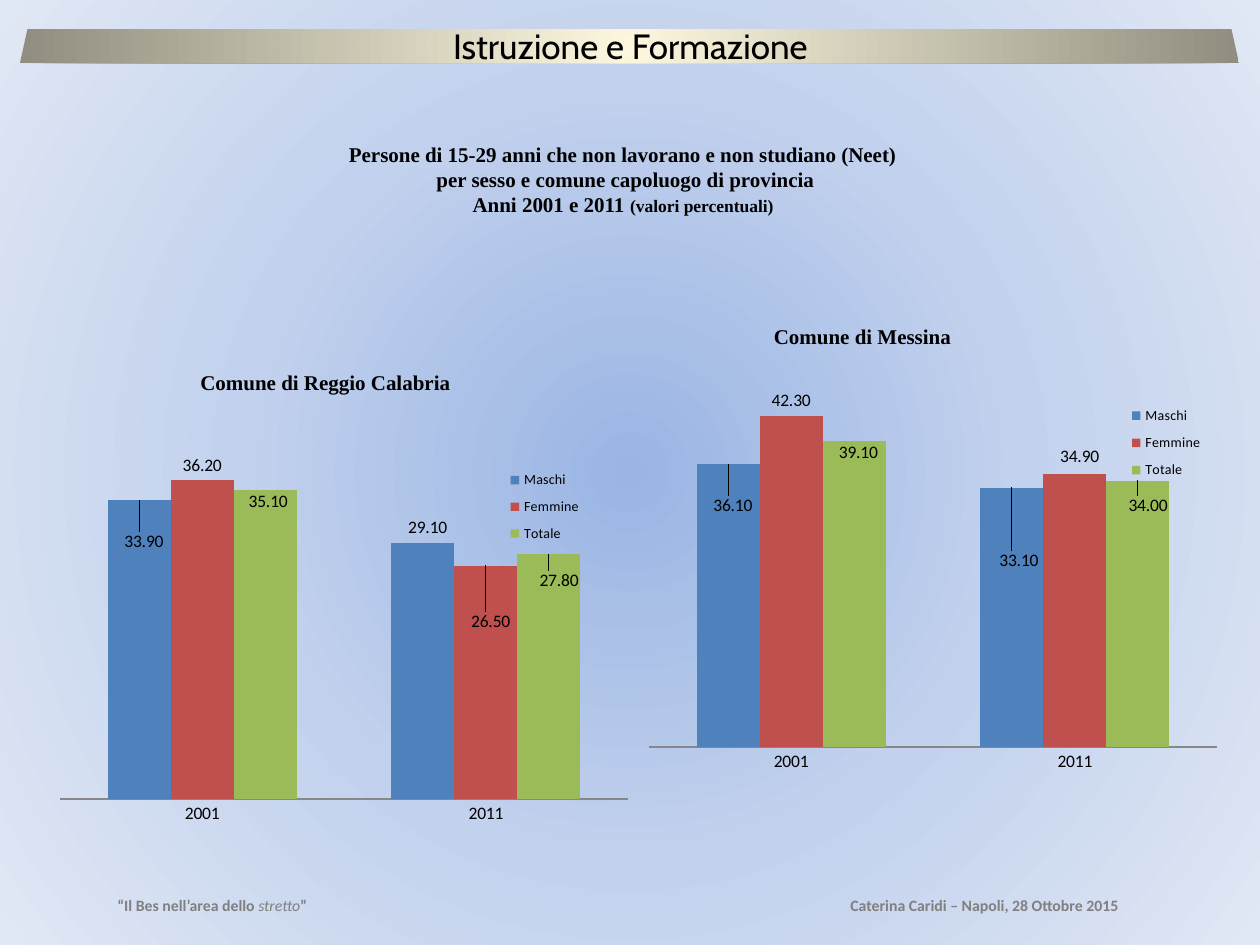
"""Build the slide on young people neither working nor studying in two cities."""
import dataclasses
import typing

import pptx
import pptx.chart.data
import pptx.dml.color
import pptx.enum.chart
import pptx.enum.shapes
import pptx.enum.text
import pptx.oxml
import pptx.oxml.ns
import pptx.util

RGBColor = pptx.dml.color.RGBColor
ALIGN = pptx.enum.text.PP_ALIGN
ANCHOR = pptx.enum.text.MSO_ANCHOR
BLACK = RGBColor(0x00, 0x00, 0x00)
GREY = RGBColor(0x80, 0x80, 0x80)
AXIS_GREY = RGBColor(0x87, 0x87, 0x87)
BLUE = RGBColor(0x4F, 0x81, 0xBD)
RED = RGBColor(0xC0, 0x50, 0x4D)
GREEN = RGBColor(0x9B, 0xBB, 0x59)
BACKGROUND_STOPS = {0: RGBColor(0x9A, 0xB5, 0xE4), 50: RGBColor(0xC2, 0xD1, 0xED),
                    100: RGBColor(0xE1, 0xE8, 0xF5)}
BANNER_STOPS = {0: RGBColor(0xFC, 0xF7, 0xDD), 100: RGBColor(0x91, 0x8E, 0x81)}
SERIF = "Times New Roman"
SANS = "Calibri"
PIXELS_PER_INCH = 126
CHART_SIZE = (590, 403)


class Box(typing.NamedTuple):
    left: int
    top: int
    width: int
    height: int


class Run(typing.NamedTuple):
    text: str
    size: typing.Optional[int] = None
    bold: typing.Optional[bool] = None
    italic: bool = False


@dataclasses.dataclass
class Series:
    name: str
    color: RGBColor
    values: tuple
    label_shifts: dict


@dataclasses.dataclass
class City:
    heading: str
    heading_box: Box
    chart_left: int
    chart_top: int
    axis_maximum: int
    legend: Box
    series: list


CITIES = [
    City("Comune di Reggio Calabria", Box(166, 363, 319, 38), 42, 443, 40, Box(458, 19, 90, 90), [
        Series("Maschi", BLUE, (33.9, 29.1), {0: (5, 56), 1: (5, 0)}),
        Series("Femmine", RED, (36.2, 26.5), {1: (5, 71)}),
        Series("Totale", GREEN, (35.1, 27.8), {0: (3, 27), 1: (10, 41)}),
    ]),
    City("Comune di Messina", Box(703, 317, 319, 38), 631, 391, 45, Box(490, 6, 90, 92), [
        Series("Maschi", BLUE, (36.1, 33.1), {0: (5, 56), 1: (7, 88)}),
        Series("Femmine", RED, (42.3, 34.9), {1: (5, -2)}),
        Series("Totale", GREEN, (39.1, 34.0), {0: (4, 27), 1: (10, 40)}),
    ]),
]


def emu(pixels: int) -> int:
    return round(pixels * pptx.util.Inches(1) / PIXELS_PER_INCH)


def place(box: Box) -> list:
    return [emu(length) for length in box]


def set_radial_gradient(gradient, stops: dict) -> None:
    marks = "".join(f'<a:gs pos="{position * 1000}"><a:srgbClr val="{color}"/></a:gs>'
                    for position, color in stops.items())
    filled = pptx.oxml.parse_xml(
        f'<a:gradFill {pptx.oxml.ns.nsdecls("a")} rotWithShape="1"><a:gsLst>{marks}</a:gsLst>'
        '<a:path path="circle"><a:fillToRect l="50000" t="50000" r="50000" b="50000"/></a:path>'
        '</a:gradFill>')
    gradient.getparent().replace(gradient, filled)


def write_text(frame, paragraphs: list, *, font: str, size: int, color: RGBColor = BLACK,
               bold: bool = False, align=ALIGN.LEFT, anchor=ANCHOR.TOP) -> None:
    frame.word_wrap = True
    frame.auto_size = pptx.enum.text.MSO_AUTO_SIZE.NONE
    frame.vertical_anchor = anchor
    for index, runs in enumerate(paragraphs):
        paragraph = frame.add_paragraph() if index else frame.paragraphs[0]
        paragraph.alignment = align
        for item in runs:
            run = paragraph.add_run()
            run.text = item.text
            run.font.name = font
            run.font.size = pptx.util.Pt(item.size or size)
            run.font.bold = bold if item.bold is None else item.bold
            run.font.italic = item.italic
            run.font.color.rgb = color


def add_text(slide, box: Box, paragraphs: list, **text_format) -> None:
    write_text(slide.shapes.add_textbox(*place(box)).text_frame, paragraphs, **text_format)


def add_banner(slide) -> None:
    banner = slide.shapes.add_shape(pptx.enum.shapes.MSO_SHAPE.TRAPEZOID,
                                    *place(Box(20, 29, 1219, 34)))
    banner.adjustments[0] = 0.22
    banner.shadow.inherit = False
    banner.line.fill.background()
    banner.fill.gradient()
    set_radial_gradient(banner._element.xpath("./p:spPr/a:gradFill")[0], BANNER_STOPS)


def add_title(slide) -> None:
    title = slide.shapes.title
    title.left, title.top, title.width, title.height = place(Box(25, 26, 1211, 39))
    frame = title.text_frame
    frame.margin_top = frame.margin_bottom = 0
    write_text(frame, [[Run("Istruzione e Formazione")]], font="Cabin", size=20,
               align=ALIGN.CENTER, anchor=ANCHOR.MIDDLE)
    slide.shapes._spTree.append(title._element)


def manual_layout(parts: dict):
    children = "".join(f'<c:{name} val="{value}"/>' for name, value in parts.items())
    return pptx.oxml.parse_xml(f'<c:layout {pptx.oxml.ns.nsdecls("c")}><c:manualLayout>'
                               f'{children}</c:manualLayout></c:layout>')


def set_layout(parent, parts: dict, after: typing.Optional[str] = None) -> None:
    for existing in parent.xpath("./c:layout"):
        parent.remove(existing)
    layout = manual_layout(parts)
    if after:
        parent.xpath(f"./c:{after}")[0].addnext(layout)
    else:
        parent.insert(0, layout)


def format_series(series, details: Series) -> None:
    series.format.fill.solid()
    series.format.fill.fore_color.rgb = details.color
    series.invert_if_negative = False
    outside = pptx.enum.chart.XL_LABEL_POSITION.OUTSIDE_END
    series.data_labels.show_value = True
    series.data_labels.number_format = "0.00"
    series.data_labels.number_format_is_linked = False
    series.data_labels.position = outside
    for index, (right, down) in details.label_shifts.items():
        series.points[index].data_label.position = outside
        label = series._element.xpath(f"./c:dLbls/c:dLbl[c:idx/@val='{index}']")[0]
        set_layout(label, {"x": round(right / CHART_SIZE[0], 3),
                           "y": round(down / CHART_SIZE[1], 3)}, after="idx")


def add_city_chart(slide, city: City) -> None:
    data = pptx.chart.data.CategoryChartData(number_format="0.00")
    data.categories = ["2001", "2011"]
    for details in city.series:
        data.add_series(details.name, details.values)
    chart = slide.shapes.add_chart(
        pptx.enum.chart.XL_CHART_TYPE.COLUMN_CLUSTERED,
        *place(Box(city.chart_left, city.chart_top, *CHART_SIZE)), data).chart
    chart.has_title = False
    chart.font.name = SANS
    chart.font.size = pptx.util.Pt(10)
    chart.font.color.rgb = BLACK
    plot = chart.plots[0]
    plot.vary_by_categories = False
    plot.gap_width = 150
    plot.overlap = 0
    for series, details in zip(plot.series, city.series):
        format_series(series, details)
    chart.value_axis.visible = False
    chart.value_axis.has_major_gridlines = False
    chart.value_axis.minimum_scale = 0
    chart.value_axis.maximum_scale = city.axis_maximum
    chart.category_axis.major_tick_mark = pptx.enum.chart.XL_TICK_MARK.NONE
    chart.category_axis.format.line.color.rgb = AXIS_GREY
    chart.has_legend = True
    chart.legend.position = pptx.enum.chart.XL_LEGEND_POSITION.RIGHT
    chart.legend.include_in_layout = False
    chart.legend.font.size = pptx.util.Pt(8)
    fractions = [round(length / CHART_SIZE[index % 2], 3)
                 for index, length in enumerate(city.legend)]
    edges = {"xMode": "edge", "yMode": "edge"}
    set_layout(chart.legend._element, {**edges, **dict(zip("xywh", fractions))}, after="legendPos")
    set_layout(chart._chartSpace.xpath("./c:chart/c:plotArea")[0],
               {"layoutTarget": "inner", **edges, "x": 0.031, "y": 0.009, "w": 0.962, "h": 0.875})


def main() -> None:
    presentation = pptx.Presentation()
    presentation.slide_width, presentation.slide_height = emu(1260), emu(945)
    slide = presentation.slides.add_slide(presentation.slide_layouts[5])
    slide.background.fill.gradient()
    set_radial_gradient(slide._element.xpath("./p:cSld/p:bg//a:gradFill")[0], BACKGROUND_STOPS)
    add_banner(slide)
    add_title(slide)
    footer = {"font": SANS, "size": 9, "color": GREY, "bold": True}
    add_text(slide, Box(105, 890, 377, 32), [[
        Run("“Il Bes nell’area dello "), Run("stretto", bold=False, italic=True), Run("”")]], **footer)
    add_text(slide, Box(838, 890, 348, 32),
             [[Run("Caterina Caridi – Napoli, 28 Ottobre 2015")]], **footer)
    heading = {"font": SERIF, "size": 12, "bold": True, "align": ALIGN.CENTER}
    add_text(slide, Box(243, 135, 760, 89), [
        [Run("Persone di 15-29 anni che non lavorano e non studiano (Neet)")],
        [Run(" per sesso e comune capoluogo di provincia")],
        [Run("Anni 2001 e 2011 "), Run("(valori percentuali)", size=10)]], **heading)
    for city in CITIES:
        add_city_chart(slide, city)
    for city in CITIES:
        add_text(slide, city.heading_box, [[Run(city.heading)]], **heading)
    presentation.save("out.pptx")


if __name__ == "__main__":
    main()
